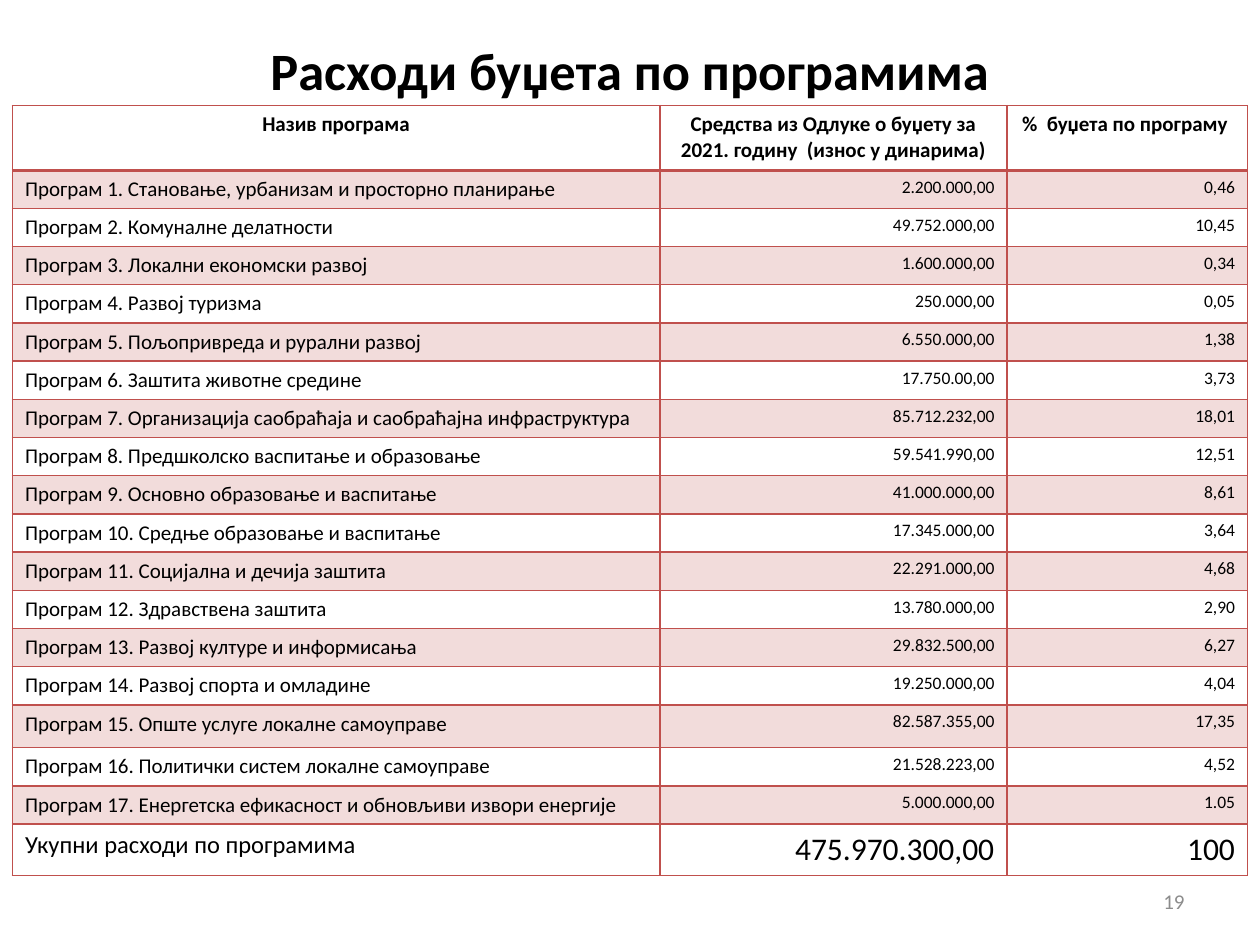
"""Build a slide with the table of budget expenditure by programme."""
from dataclasses import dataclass

import pptx
import pptx.dml.color
import pptx.enum.text
import pptx.oxml
import pptx.oxml.ns
import pptx.util

Cm = pptx.util.Cm
Pt = pptx.util.Pt
RGBColor = pptx.dml.color.RGBColor
PP_ALIGN = pptx.enum.text.PP_ALIGN
MSO_ANCHOR = pptx.enum.text.MSO_ANCHOR

FONT = "Calibri"
BLACK = RGBColor(0x00, 0x00, 0x00)
GREY = RGBColor(0x8C, 0x8C, 0x8C)
RED = RGBColor(0xC0, 0x50, 0x4D)
PINK = RGBColor(0xF2, 0xDC, 0xDB)
NO_STYLE = "{2D5ABB26-0587-4C30-8999-92F81FD0307C}"
COLUMN_WIDTHS = (13.05, 7, 4.85)


@dataclass(frozen=True)
class BudgetRow:
    name: str
    amount: str
    share: str
    height: float = 0.77
    name_size: int = 12
    value_size: int = 10
    header: bool = False


HEADER = BudgetRow(
    "Назив програма",
    "Средства из Одлуке о буџету за 2021. годину  (износ у динарима)",
    "%  буџета по програму ",
    height=1.3, value_size=12, header=True,
)
PROGRAMMES = (
    BudgetRow("Програм 1. Становање, урбанизам и просторно планирање", "2.200.000,00", "0,46"),
    BudgetRow("Програм 2. Комуналне делатности", "49.752.000,00", "10,45"),
    BudgetRow("Програм 3. Локални економски развој", "1.600.000,00", "0,34"),
    BudgetRow("Програм 4. Развој туризма", "250.000,00", "0,05"),
    BudgetRow("Програм 5. Пољопривреда и рурални развој", "6.550.000,00", "1,38"),
    BudgetRow("Програм 6. Заштита животне средине", "17.750.00,00", "3,73"),
    BudgetRow("Програм 7. Организација саобраћаја и саобраћајна инфраструктура",
              "85.712.232,00", "18,01"),
    BudgetRow("Програм 8. Предшколско васпитање и образовање", "59.541.990,00", "12,51"),
    BudgetRow("Програм 9. Основно образовање и васпитање", "41.000.000,00", "8,61"),
    BudgetRow("Програм 10. Средње образовање и васпитање", "17.345.000,00", "3,64"),
    BudgetRow("Програм 11. Социјална и дечија заштита", "22.291.000,00", "4,68"),
    BudgetRow("Програм 12. Здравствена заштита", "13.780.000,00", "2,90"),
    BudgetRow("Програм 13. Развој културе и информисања", "29.832.500,00", "6,27"),
    BudgetRow("Програм 14. Развој спорта и омладине", "19.250.000,00", "4,04"),
    BudgetRow("Програм 15. Опште услуге локалне самоуправе", "82.587.355,00", "17,35",
              height=0.86),
    BudgetRow("Програм 16. Политички систем локалне самоуправе", "21.528.223,00", "4,52"),
    BudgetRow("Програм 17. Енергетска ефикасност и обновљиви извори енергије",
              "5.000.000,00", "1.05"),
)
TOTAL = BudgetRow("Укупни расходи по програмима", "475.970.300,00", "100",
                  height=1.04, name_size=14, value_size=18)
ROWS = (HEADER, *PROGRAMMES, TOTAL)


@dataclass(frozen=True)
class Label:
    text: str
    left: float
    top: float
    width: float
    height: float
    size: int
    color: RGBColor
    align: PP_ALIGN
    bold: bool = False


LABELS = (
    Label("Расходи буџета по програмима", 1.88, 0.33, 21.64, 2.16, 30, BLACK,
          PP_ALIGN.CENTER, bold=True),
    Label("19", 18.21, 17.65, 5.92, 1.02, 12, GREY, PP_ALIGN.RIGHT),
)


def set_text(tf, text: str, size: int, color: RGBColor, align: PP_ALIGN, bold: bool) -> None:
    tf.text = text
    tf.word_wrap = True
    p = tf.paragraphs[0]
    p.alignment = align
    font = p.runs[0].font
    font.name, font.size, font.bold = FONT, Pt(size), bold
    font.color.rgb = color


def add_label(s, label: Label) -> None:
    sp = s.shapes.add_textbox(Cm(label.left), Cm(label.top), Cm(label.width), Cm(label.height))
    tf = sp.text_frame
    set_text(tf, label.text, label.size, label.color, label.align, label.bold)
    tf.vertical_anchor = MSO_ANCHOR.MIDDLE


def set_borders(cell, top: float, bottom: float) -> None:
    tcPr = cell._tc.get_or_add_tcPr()
    for side, width in (("L", 1), ("R", 1), ("T", top), ("B", bottom)):
        tcPr.append(pptx.oxml.parse_xml(
            f'<a:ln{side} {pptx.oxml.ns.nsdecls("a")} w="{Pt(width)}">'
            f'<a:solidFill><a:srgbClr val="{RED}"/></a:solidFill></a:ln{side}>'))


def fill_row(table, index: int, row: BudgetRow) -> None:
    table.rows[index].height = Cm(row.height)
    for col, text in enumerate((row.name, row.amount, row.share)):
        cell = table.cell(index, col)
        size = row.value_size if col else row.name_size
        align = PP_ALIGN.RIGHT if col else PP_ALIGN.LEFT
        if row.header:
            align = PP_ALIGN.CENTER
        set_text(cell.text_frame, text, size, BLACK, align, row.header)
        set_borders(cell, top=2 if index == 1 else 1, bottom=2 if row.header else 1)
        if index % 2:
            cell.fill.solid()
            cell.fill.fore_color.rgb = PINK
        else:
            cell.fill.background()


def add_budget_table(s) -> None:
    frame = s.shapes.add_table(
        len(ROWS), len(COLUMN_WIDTHS), Cm(0.25), Cm(2.13),
        Cm(sum(COLUMN_WIDTHS)), Cm(sum(row.height for row in ROWS)))
    table = frame.table
    table.horz_banding = False
    table._tbl.tblPr.find(pptx.oxml.ns.qn("a:tableStyleId")).text = NO_STYLE
    for column, width in zip(table.columns, COLUMN_WIDTHS):
        column.width = Cm(width)
    for index, row in enumerate(ROWS):
        fill_row(table, index, row)


def main() -> None:
    prs = pptx.Presentation()
    prs.slide_width, prs.slide_height = Cm(25.4), Cm(19.05)
    s = prs.slides.add_slide(prs.slide_layouts[6])
    for label in LABELS:
        add_label(s, label)
    add_budget_table(s)
    prs.save("out.pptx")


if __name__ == "__main__":
    main()
